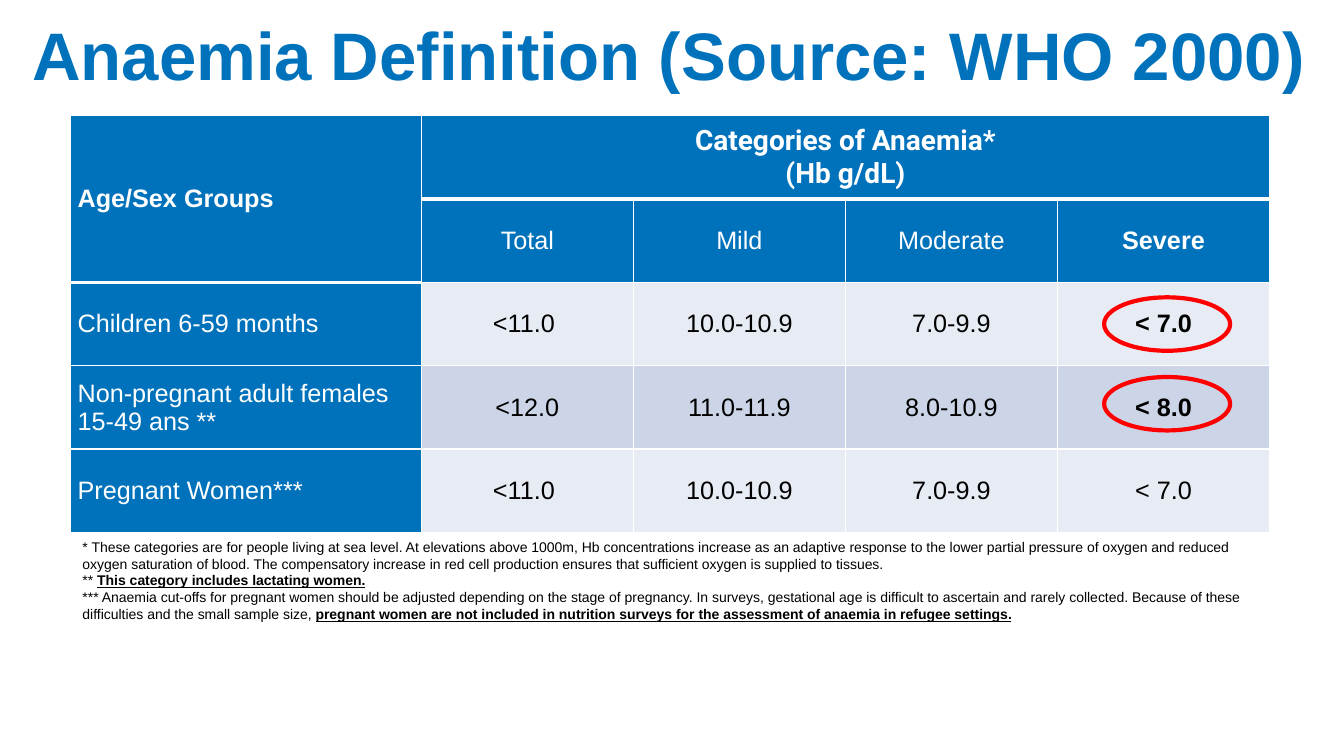
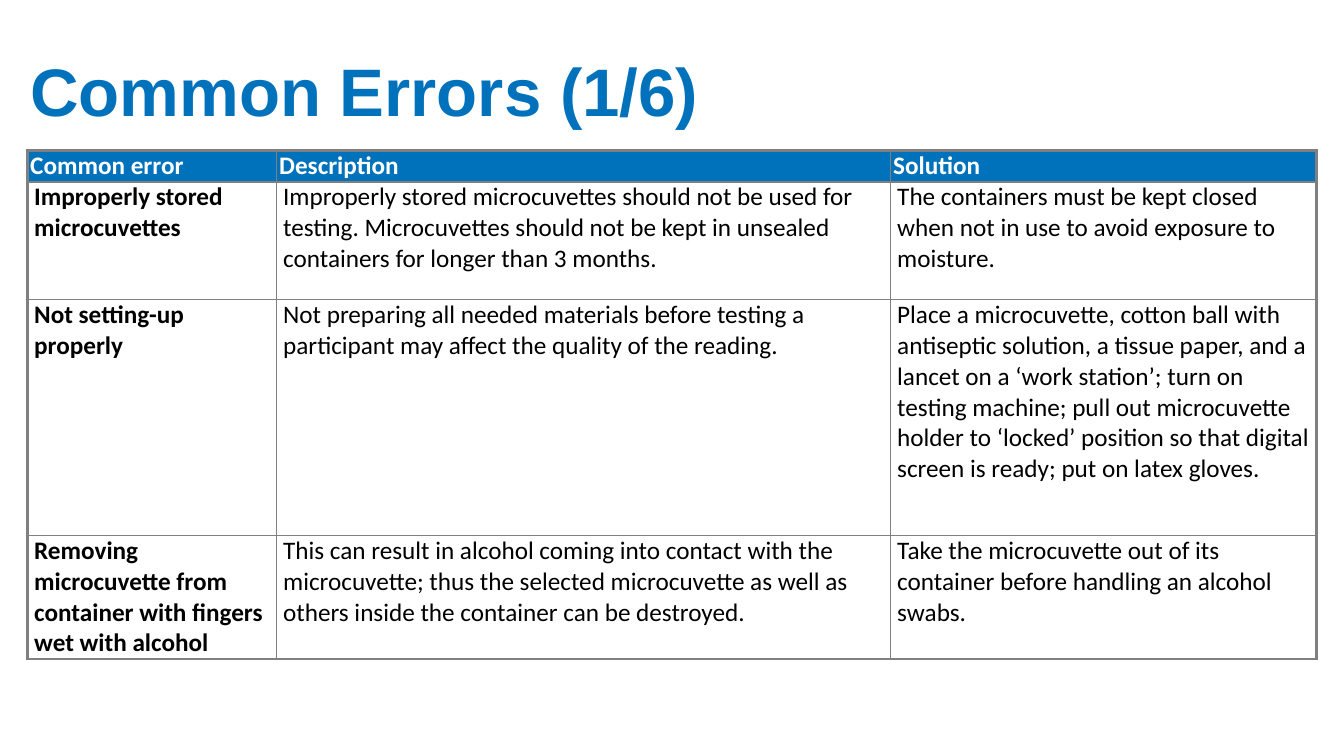
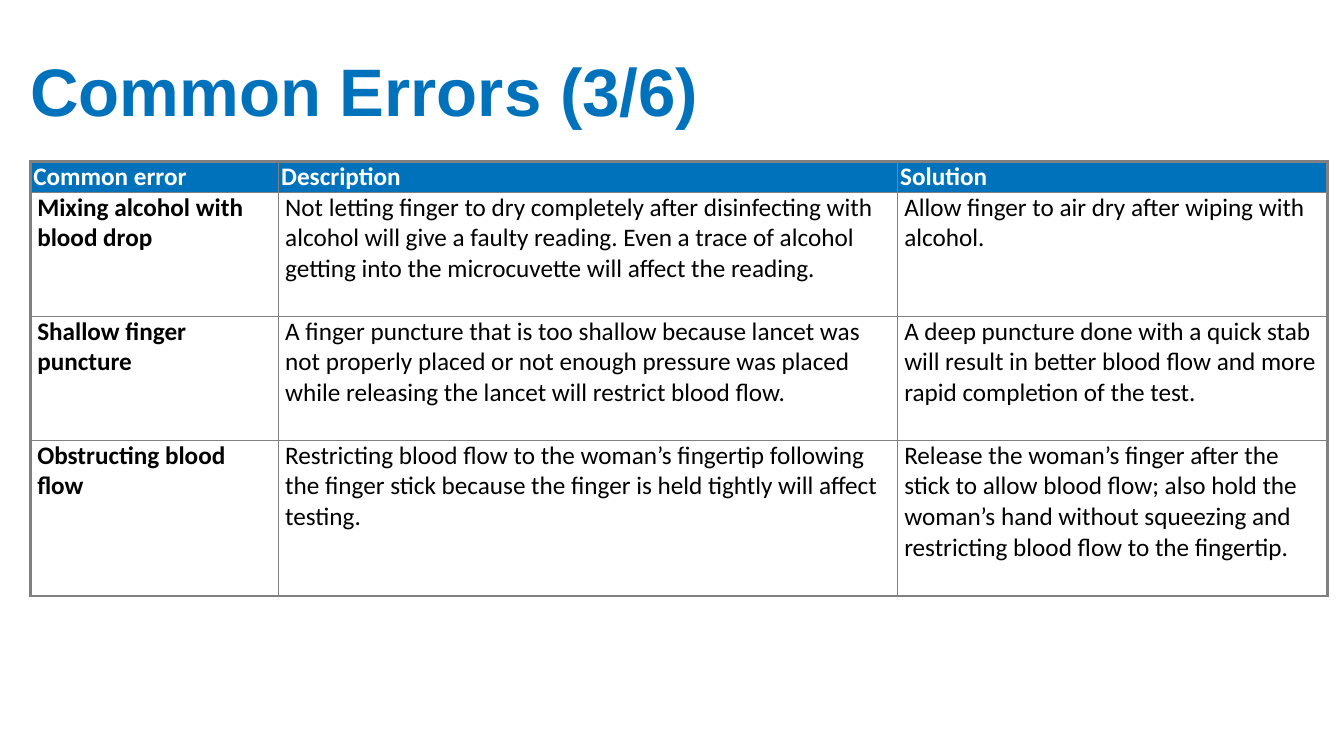
from lxml import etree
from pptx import Presentation
from pptx.dml.color import RGBColor
from pptx.enum.shapes import MSO_SHAPE
from pptx.enum.text import MSO_ANCHOR, MSO_AUTO_SIZE, PP_ALIGN
from pptx.oxml.ns import qn
from pptx.util import Inches, Pt

OVAL = MSO_SHAPE.OVAL
TOP, MID, LOW = MSO_ANCHOR.TOP, MSO_ANCHOR.MIDDLE, MSO_ANCHOR.BOTTOM
LEFT, MIDST = PP_ALIGN.LEFT, PP_ALIGN.CENTER
FIXED = MSO_AUTO_SIZE.NONE

INK = {"blue": "0072BC", "white": "FFFFFF", "black": "000000", "gray": "808080",
       "pale": "E7EBF3", "band": "CCD5E7", "red": "FF0000"}
HIGH = (2.25, 4, 95.8, 13.33)
HEADS = ["Common error", "Description", "Solution"]


def tint(name):
    """Return a palette colour."""
    return RGBColor.from_string(INK[name])


class Deck:
    """Holds the style and the current slide; lengths are percent of the slide."""

    def __init__(self):
        """Open a wide deck."""
        self.deck = Presentation()
        self.deck.slide_width = Inches(13.33)
        self.deck.slide_height = Inches(7.5)
        self.slide = None

    def wide(self, part):
        """Turn a share of the width into a length."""
        return round(self.deck.slide_width * part / 100)

    def tall(self, part):
        """Turn a share of the height into a length."""
        return round(self.deck.slide_height * part / 100)

    def box(self, at):
        """Turn four shares into left, top, width and height."""
        x, y, w, h = at
        return self.wide(x), self.tall(y), self.wide(w), self.tall(h)

    def style(self, para, size, face="Arial", ink="black", bold=None, align=LEFT):
        """Format one paragraph."""
        para.alignment = align
        font = para.font
        font.size, font.name, font.bold = Pt(size), face, bold
        font.color.rgb = tint(ink)

    def page(self, title, at=HIGH):
        """Add a slide with its title."""
        self.slide = self.deck.slides.add_slide(self.deck.slide_layouts[5])
        head = self.slide.shapes.title
        head.left, head.top, head.width, head.height = self.box(at)
        frame = head.text_frame
        frame.text = title
        frame.auto_size, frame.word_wrap = FIXED, True
        frame.vertical_anchor = LOW
        frame.margin_left = frame.margin_right = 0
        frame.margin_top = frame.margin_bottom = 0
        para = frame.paragraphs[0]
        para.line_spacing = 0.9
        self.style(para, 48, ink="blue", bold=True)

    def ring(self, at):
        """Add a red ellipse outline."""
        oval = self.slide.shapes.add_shape(OVAL, *self.box(at))
        oval.shadow.inherit = False
        oval.fill.background()
        oval.line.color.rgb = tint("red")
        oval.line.width = Pt(3)

    def notes(self, at, lines):
        """Add small text; each line has a plain part and a stressed part."""
        frame = self.slide.shapes.add_textbox(*self.box(at)).text_frame
        frame.word_wrap = True
        for i, (plain, stress) in enumerate(lines):
            para = frame.add_paragraph() if i else frame.paragraphs[0]
            para.add_run().text = plain
            if stress:
                run = para.add_run()
                run.text = stress
                run.font.bold = run.font.underline = True
            self.style(para, 10)

    def edge(self, cell, ink, sizes):
        """Draw left, right, top and bottom borders."""
        props = cell._tc.get_or_add_tcPr()
        for side, size in zip("LRTB", sizes):
            line = etree.SubElement(props, qn("a:ln" + side), w=str(Pt(size)))
            fill = etree.SubElement(line, qn("a:solidFill"))
            etree.SubElement(fill, qn("a:srgbClr"), val=INK[ink])

    def table(self, spot, cols, rows, cells, look, rule, spans=()):
        """Add a table; look gives fill, pad, anchor and font, rule gives borders."""
        at = (*spot, sum(cols), sum(rows))
        grid = self.slide.shapes.add_table(len(rows), len(cols), *self.box(at)).table
        grid.first_row = grid.horz_banding = False
        for col, part in zip(grid.columns, cols):
            col.width = self.wide(part)
        for row, part in zip(grid.rows, rows):
            row.height = self.tall(part)
        for r, line in enumerate(cells):
            for c, text in enumerate(line):
                cell = grid.cell(r, c)
                fill, pad, anchor, font = look(r, c)
                self.edge(cell, *rule(r, c))
                cell.fill.solid()
                cell.fill.fore_color.rgb = tint(fill)
                cell.vertical_anchor = anchor
                cell.margin_left = cell.margin_right = Inches(pad)
                cell.margin_top = cell.margin_bottom = 0
                cell.text = text
                for para in cell.text_frame.paragraphs:
                    self.style(para, **font)
        for first, last in spans:
            grid.cell(*first).merge(grid.cell(*last))

    def errors(self, part, spot, cols, rows, cells):
        """Add a slide with a table of errors."""
        def look(r, c):
            """Style a header or body cell."""
            font = {"size": 18, "face": "Calibri", "bold": r == 0 or c == 0,
                    "ink": "black" if r else "white"}
            return ("white", 0.07, TOP, font) if r else ("blue", 0.03, TOP, font)

        def rule(r, c):
            """Thicken the outer sides and the top."""
            return "gray", (1 if c else 2.25, 2.25 if c == 2 else 1, 1 if r else 2.25, 1)

        self.page(f"Common Errors ({part}/6)")
        self.table(spot, cols, rows, [HEADS, *cells], look, rule)


def level(r, c):
    """Style a cell of the anaemia table."""
    head = r < 2 or c == 0
    top = r == 0 and c > 0
    fill = "blue" if head else "band" if r == 3 else "pale"
    bold = r == 0 or (c == 4 and r < 4)
    font = {"size": 20 if top else 18, "face": "Roboto" if top else "Arial",
            "ink": "white" if head else "black", "bold": bold,
            "align": MIDST if c else LEFT}
    return fill, 0.07, MID, font


def seam(r, c):
    """Thicken the line below the headings."""
    last = 0 if c else 1
    return "white", (1, 1, 3 if r == last + 1 else 1, 3 if r == last else 1)


def main():
    """Build the three slides."""
    deck = Deck()
    deck.page("Anaemia Definition (Source: WHO 2000)", (2.4, 1.33, 95.8, 11.2))
    deck.table((5.25, 15.33), [26.1] + [15.78] * 4, [11.02] * 5, [
        ["Age/Sex Groups", "Categories of Anaemia*\n(Hb g/dL)", "", "", ""],
        ["", "Total", "Mild", "Moderate", "Severe"],
        ["Children 6-59 months", "<11.0 ", "10.0-10.9", "7.0-9.9", "< 7.0"],
        ["Non-pregnant adult females 15-49 ans **", "<12.0", "11.0-11.9", "8.0-10.9", "< 8.0"],
        ["Pregnant Women***", "<11.0 ", "10.0-10.9", "7.0-9.9", "< 7.0"],
    ], level, seam, [((0, 0), (1, 0)), ((0, 1), (0, 4))])
    for top in (39.33, 49.87):
        deck.ring((82.15, top, 9.38, 7.07))
    deck.notes((5.4, 70.53, 88.9, 12.53), [
        ("* These categories are for people living at sea level. At elevations above 1000m, "
         "Hb concentrations increase as an adaptive response to the lower partial pressure of "
         "oxygen and reduced oxygen saturation of blood. The compensatory increase in red cell "
         "production ensures that sufficient oxygen is supplied to tissues.", ""),
        ("** ", "This category includes lactating women."),
        ("*** Anaemia cut-offs for pregnant women should be adjusted depending on the stage of "
         "pregnancy. In surveys, gestational age is difficult to ascertain and rarely collected. "
         "Because of these difficulties and the small sample size, ",
         "pregnant women are not included in nutrition surveys for the assessment of anaemia "
         "in refugee settings."),
    ])
    deck.errors(1, (2.02, 19.87), [18.53, 45.69, 31.73], [4.2, 15.6, 31.2, 16.3], [
        ["Improperly stored microcuvettes",
         "Improperly stored microcuvettes should not be used for testing. Microcuvettes should "
         "not be kept in unsealed containers for longer than 3 months.",
         "The containers must be kept closed when not in use to avoid exposure to moisture."],
        ["Not setting-up properly",
         "Not preparing all needed materials before testing a participant may affect the quality "
         "of the reading.",
         "Place a microcuvette, cotton ball with antiseptic solution, a tissue paper, and a lancet "
         "on a ‘work station’; turn on testing machine; pull out microcuvette holder to ‘locked’ "
         "position so that digital screen is ready; put on latex gloves."],
        ["Removing microcuvette from container with fingers wet with alcohol",
         "This can result in alcohol coming into contact with the microcuvette; thus the selected "
         "microcuvette as well as others inside the container can be destroyed.",
         "Take the microcuvette out of its container before handling an alcohol swabs."],
    ])
    deck.errors(3, (2.25, 21.33), [18.45, 46.06, 32.03], [4.1, 16.4, 16.4, 20.6], [
        ["Mixing alcohol with blood drop",
         "Not letting finger to dry completely after disinfecting with alcohol will give a faulty "
         "reading. Even a trace of alcohol getting into the microcuvette will affect the reading.",
         "Allow finger to air dry after wiping with alcohol."],
        ["Shallow finger puncture",
         "A finger puncture that is too shallow because lancet was not properly placed or not "
         "enough pressure was placed while releasing the lancet will restrict blood flow.",
         "A deep puncture done with a quick stab will result in better blood flow and more rapid "
         "completion of the test."],
        ["Obstructing blood flow",
         "Restricting blood flow to the woman’s fingertip following the finger stick because the "
         "finger is held tightly will affect testing.",
         "Release the woman’s finger after the stick to allow blood flow; also hold the woman’s "
         "hand without squeezing and restricting blood flow to the fingertip."],
    ])
    deck.deck.save("out.pptx")


if __name__ == "__main__":
    main()
